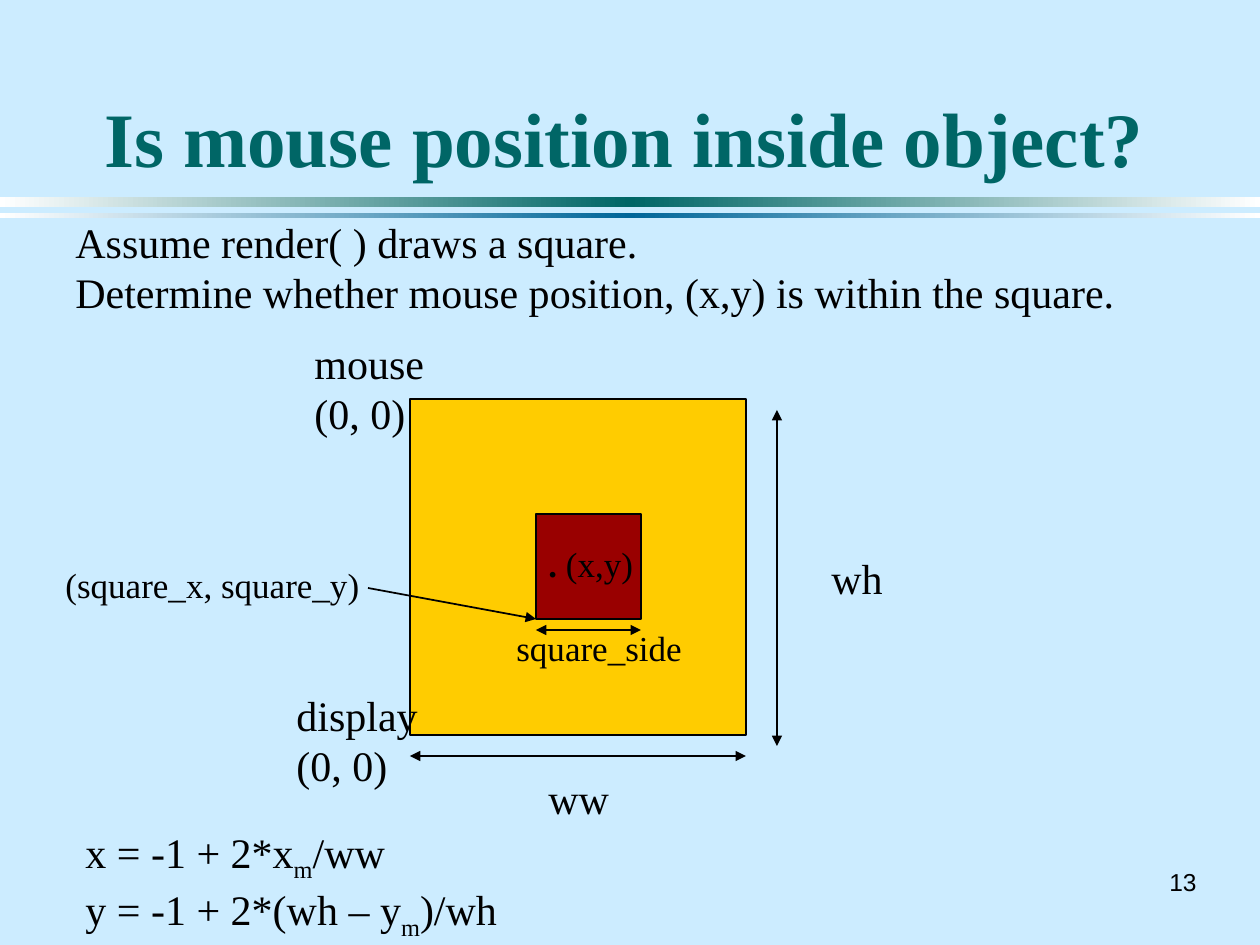
from copy import deepcopy

from lxml import etree
from pptx import Presentation
from pptx.dml.color import RGBColor
from pptx.enum.shapes import MSO_CONNECTOR, MSO_SHAPE
from pptx.enum.text import MSO_ANCHOR, MSO_AUTO_SIZE, PP_ALIGN
from pptx.oxml.ns import qn
from pptx.util import Emu, Pt

SCALE = 914400 / 126
RECTANGLE = MSO_SHAPE.RECTANGLE
STRAIGHT = MSO_CONNECTOR.STRAIGHT
BOTTOM, MIDDLE = MSO_ANCHOR.BOTTOM, MSO_ANCHOR.MIDDLE
GROW = MSO_AUTO_SIZE.SHAPE_TO_FIT_TEXT
CENTER, RIGHT = PP_ALIGN.CENTER, PP_ALIGN.RIGHT

SKY = RGBColor(0xCC, 0xEC, 0xFF)
TEAL = RGBColor(0x00, 0x66, 0x66)
BLUE = RGBColor(0x00, 0x66, 0x99)
GOLD = RGBColor(0xFF, 0xCC, 0x00)
MAROON = RGBColor(0x99, 0x00, 0x00)
BLACK = RGBColor(0x00, 0x00, 0x00)
WHITE = RGBColor(0xFF, 0xFF, 0xFF)

BODY = {"name": "Times New Roman", "size": Pt(24), "bold": False}
SMALL = {**BODY, "size": Pt(20)}
TITLE = {**BODY, "size": Pt(44), "bold": True}
NUMBER = {**BODY, "name": "Arial", "size": Pt(14)}


def px(*lengths):
    return [Emu(round(length * SCALE)) for length in lengths]


def add_text(page, box, paragraphs, style, color=BLACK, align=None, wrap=True, **frame_format):
    frame = page.shapes.add_textbox(*px(*box)).text_frame
    frame_format = {"word_wrap": wrap, "auto_size": GROW, **frame_format}
    for key, value in frame_format.items():
        setattr(frame, key, value)
    for index, pieces in enumerate(paragraphs):
        para = frame.add_paragraph() if index else frame.paragraphs[0]
        para.alignment = align
        for text, changes, baseline in pieces:
            span = para.add_run()
            span.text = text
            for key, value in {**style, **changes}.items():
                setattr(span.font, key, value)
            span.font.color.rgb = color
            if baseline:
                span.font._element.set("baseline", str(baseline))


def plain(*lines):
    return [[(line, {}, 0)] for line in lines]


def add_rectangle(page, box, color):
    shape = page.shapes.add_shape(RECTANGLE, *px(*box))
    shape.shadow.inherit = False
    shape.fill.solid()
    shape.fill.fore_color.rgb = color
    shape.line.color.rgb = BLACK
    shape.line.width = Pt(1)


def add_arrow(page, start, end, ends=("headEnd", "tailEnd")):
    arrow = page.shapes.add_connector(STRAIGHT, *px(*start, *end))
    arrow.line.color.rgb = BLACK
    arrow.line.width = Pt(1)
    line = arrow.line._get_or_add_ln()
    for name in ends:
        etree.SubElement(line, qn(f"a:{name}"), type="triangle")
    etree.SubElement(arrow._element.spPr, qn("a:effectLst"))


def add_gradient_bar(page, box, color):
    bar = page.shapes.add_shape(RECTANGLE, *px(*box))
    bar.shadow.inherit = False
    bar.line.fill.background()
    bar.fill.gradient()
    bar.fill.gradient_angle = 0
    stops = bar.fill._fill._gradFill.find(qn("a:gsLst"))
    stops.insert(1, deepcopy(stops[0]))
    for stop, position, shade in zip(bar.fill.gradient_stops, (0, 0.5, 1), (WHITE, color, WHITE)):
        stop.position = position
        stop.color.rgb = shade


def draw_header(page, box):
    left, top, width, height = box
    add_gradient_bar(page, (left, top + 197, width, 10), TEAL)
    add_gradient_bar(page, (left, top + 213, width, 5), BLUE)
    add_text(page, (left + 84, top + 32, 1081, 157), plain("Is mouse position inside object?"),
             TITLE, TEAL, CENTER, auto_size=MSO_AUTO_SIZE.NONE, vertical_anchor=BOTTOM)


def draw_diagram(page, box):
    left, top, side, _ = box

    def at(x, y, *size):
        return (left + x, top + y, *size)

    square_left, square_top, square_side = 126, 115, 105
    square_right, square_bottom = square_left + square_side, square_top + square_side

    add_rectangle(page, box, GOLD)
    add_rectangle(page, at(square_left, square_top, square_side, square_side), MAROON)

    labels = [
        ("mouse (0, 0)", (-108, -68, 170, 113), BODY, True),
        ("display (0, 0)", (-126, 284, 170, 113), BODY, True),
        ("wh", (409, 147, 77, 63), BODY, False),
        ("ww", (square_left, 367, 86, 63), BODY, False),
        ("(square_x, square_y)", (-357, 158, 323, 54), SMALL, True),
        ("square_side", (94, 221, 199, 54), SMALL, True),
    ]
    for text, place, style, wrap in labels:
        add_text(page, at(*place), plain(text), style, wrap=wrap)
    add_text(page, at(square_left, 137, 136, 54),
             [[(".", {"bold": True}, 0), (" (x,y)", {}, 0)]], SMALL)

    add_arrow(page, at(side + 31, 11), at(side + 31, side + 11))
    add_arrow(page, at(0, side + 21), at(side, side + 21))
    add_arrow(page, at(square_left, square_bottom + 11), at(square_right, square_bottom + 11))
    add_arrow(page, at(-42, 189), at(square_left, square_bottom), ("tailEnd",))


def draw_formulas(page, box):
    formulas = [("x = -1 + 2*x", "/ww"), ("y = -1 + 2*(wh – y", ")/wh")]
    add_text(page, box, [[(start, {}, 0), ("m", {}, -25000), (end, {}, 0)]
                         for start, end in formulas], BODY)


def main():
    deck = Presentation()
    deck.slide_width, deck.slide_height = px(1260, 945)
    page = deck.slides.add_slide(deck.slide_layouts[6])
    page.background.fill.solid()
    page.background.fill.fore_color.rgb = SKY

    draw_header(page, (0, 0, 1260, 218))
    add_text(page, (63, 210, 1134, 114),
             plain("Assume render( ) draws a square.",
                   "Determine whether mouse position, (x,y) is within the square."), BODY)
    draw_diagram(page, (410, 399, 336, 336))
    draw_formulas(page, (73, 820, 1018, 114))
    add_text(page, (1155, 861, 54, 42), plain("13"), NUMBER, align=RIGHT, wrap=False,
             vertical_anchor=MIDDLE)
    deck.save("out.pptx")


if __name__ == "__main__":
    main()
